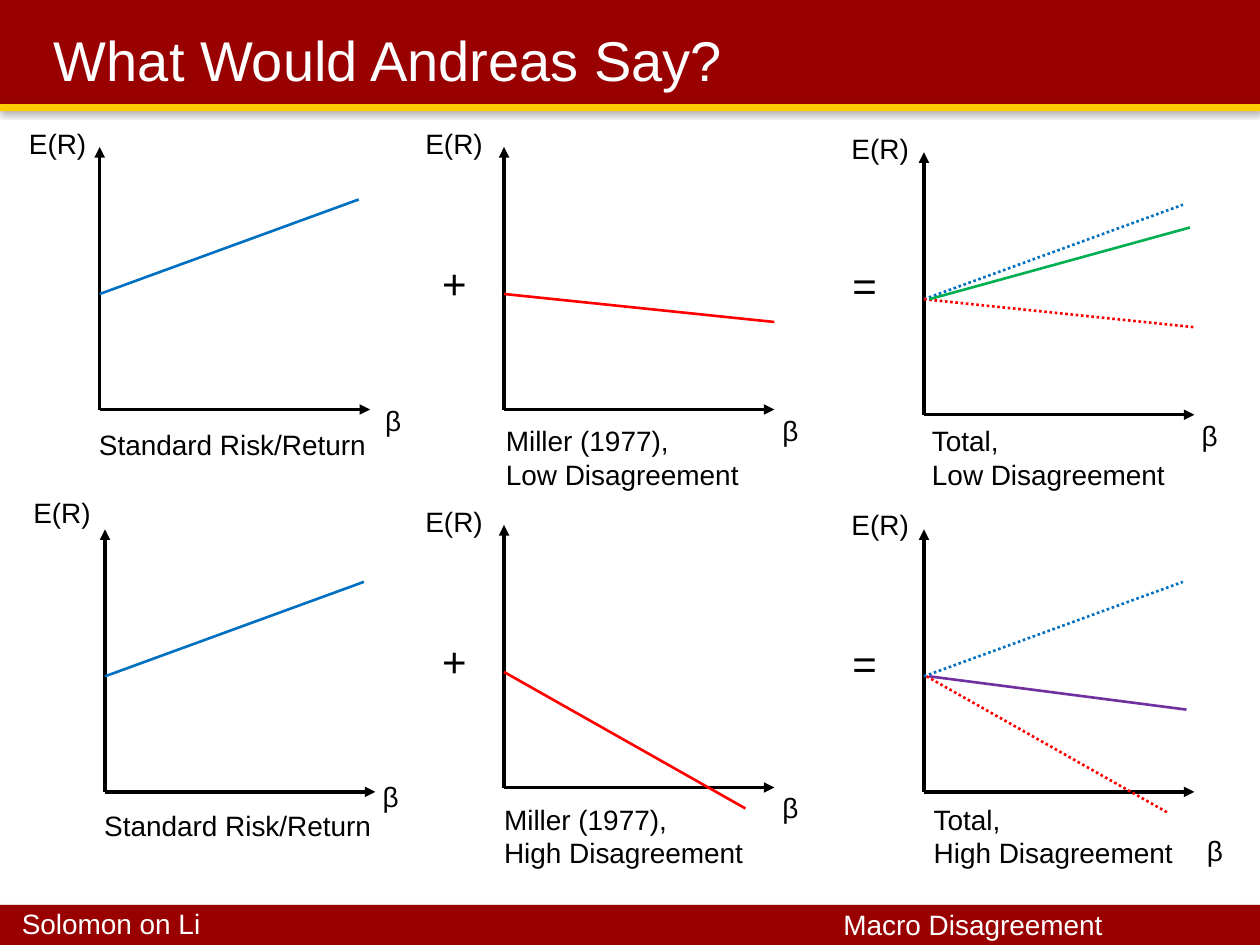
"""Build a slide of six expected-return charts under low and high disagreement."""
from dataclasses import dataclass

from lxml import etree
from pptx import Presentation
from pptx.dml.color import RGBColor
from pptx.enum.dml import MSO_LINE
from pptx.enum.shapes import MSO_CONNECTOR, MSO_SHAPE
from pptx.enum.text import MSO_ANCHOR
from pptx.oxml.ns import qn
from pptx.util import Pt

STRAIGHT = MSO_CONNECTOR.STRAIGHT
RECTANGLE = MSO_SHAPE.RECTANGLE
DOTTED = MSO_LINE.ROUND_DOT
MIDDLE = MSO_ANCHOR.MIDDLE
TOP = MSO_ANCHOR.TOP

BLACK = RGBColor(0x00, 0x00, 0x00)
WHITE = RGBColor(0xFF, 0xFF, 0xFF)
CRIMSON = RGBColor(0x99, 0x00, 0x00)
GOLD = RGBColor(0xFF, 0xCC, 0x00)
BLUE = RGBColor(0x00, 0x70, 0xC0)
RED = RGBColor(0xFF, 0x00, 0x00)
GREEN = RGBColor(0x00, 0xB0, 0x50)
PURPLE = RGBColor(0x70, 0x30, 0xA0)

FONT = "Arial"
SLIDE_WIDTH, SLIDE_HEIGHT = 720, 540
AXIS_WIDTH, AXIS_HEIGHT = 154.5, 150
INTERCEPT = 66


@dataclass
class Trend:
    """A return line: horizontal start offset, run, drop and look."""
    run: float
    drop: float
    color: RGBColor
    start: float = 0
    dotted: bool = False


@dataclass
class Panel:
    """A chart with its origin, label places, caption and trends."""
    origin: tuple
    return_label: tuple
    beta_label: tuple
    caption_place: tuple
    caption: list
    trends: list


PANELS = [
    Panel((57, 234), (9.5, 69), (213, 227), (49.5, 240.5),
          ["Standard Risk/Return"], [Trend(148, -54, BLUE)]),
    Panel((288, 234), (236, 69), (440, 232.5), (282, 238.5),
          ["Miller (1977),", "Low Disagreement"], [Trend(154.5, 16, RED)]),
    Panel((528, 237), (479.5, 71.5), (679.5, 235.5), (525.5, 238.5),
          ["Total,", "Low Disagreement"],
          [Trend(148, -54, BLUE, dotted=True),
           Trend(154.5, 16, RED, dotted=True),
           Trend(149, -41, GREEN, start=3)]),
    Panel((60, 452.5), (12, 279.5), (211.5, 442), (52.5, 458.5),
          ["Standard Risk/Return"], [Trend(148, -54, BLUE)]),
    Panel((288, 450), (236, 285), (440, 448), (281, 455),
          ["Miller (1977),", "High Disagreement"], [Trend(138, 78, RED)]),
    Panel((528, 452.5), (479.5, 286.5), (682.5, 472.5), (526.5, 455),
          ["Total,", "High Disagreement"],
          [Trend(148, -54, BLUE, dotted=True),
           Trend(147, 19, PURPLE, start=3),
           Trend(138, 78, RED, start=1.5, dotted=True)]),
]


def add_band(slide, top, height, color, opacity):
    """Add a full-width band with a soft shadow below it."""
    shape = slide.shapes.add_shape(
        RECTANGLE, Pt(0), Pt(top), Pt(SLIDE_WIDTH), Pt(height))
    shape.fill.solid()
    shape.fill.fore_color.rgb = color
    shape.line.fill.background()
    shape.shadow.inherit = False
    effects = shape._element.spPr.find(qn("a:effectLst"))
    shadow = etree.SubElement(
        effects, qn("a:outerShdw"), blurRad=str(Pt(3.1)), dist=str(Pt(1.8)),
        dir="5400000", rotWithShape="0")
    shadow_color = etree.SubElement(shadow, qn("a:srgbClr"), val="000000")
    etree.SubElement(shadow_color, qn("a:alpha"), val=str(opacity * 1000))


def add_text(slide, place, size, lines, points=16, color=BLACK,
             wrap=True, inset=True, anchor=TOP):
    """Add a text box with one paragraph per line."""
    shape = slide.shapes.add_textbox(*(Pt(value) for value in place + size))
    frame = shape.text_frame
    frame.word_wrap = wrap
    frame.vertical_anchor = anchor
    if not inset:
        frame.margin_left = frame.margin_right = Pt(0)
        frame.margin_top = frame.margin_bottom = Pt(0)
    for index, line in enumerate(lines):
        paragraph = frame.add_paragraph() if index else frame.paragraphs[0]
        run = paragraph.add_run()
        run.text = line
        run.font.name = FONT
        run.font.size = Pt(points)
        run.font.color.rgb = color


def add_line(slide, start, end, color, width, dotted=False, arrow=False):
    """Add a straight line, dotted or ending in an arrowhead on request."""
    connector = slide.shapes.add_connector(
        STRAIGHT, *(Pt(value) for value in start + end))
    connector.line.color.rgb = color
    connector.line.width = Pt(width)
    if dotted:
        connector.line.dash_style = DOTTED
    properties = connector._element.spPr
    if arrow:
        etree.SubElement(properties.find(qn("a:ln")), qn("a:tailEnd"), type="triangle")
    etree.SubElement(properties, qn("a:effectLst"))


def add_panel(slide, panel):
    """Add the axes, labels, trends and caption of one chart."""
    left, base = panel.origin
    for end in ((left, base - AXIS_HEIGHT), (left + AXIS_WIDTH, base)):
        add_line(slide, panel.origin, end, BLACK, 2, arrow=True)
    for trend in panel.trends:
        start = (left + trend.start, base - INTERCEPT)
        end = (start[0] + trend.run, start[1] + trend.drop)
        add_line(slide, start, end, trend.color, 1.5, dotted=trend.dotted)
    add_text(slide, panel.return_label, (47.5, 26.5), ["E(R)"], wrap=False)
    add_text(slide, panel.beta_label, (40, 26.5), ["β"])
    height = 26.5 if len(panel.caption) == 1 else 46
    add_text(slide, panel.caption_place, (186, height), panel.caption)


def main():
    """Build and save the slide."""
    presentation = Presentation()
    presentation.slide_width = Pt(SLIDE_WIDTH)
    presentation.slide_height = Pt(SLIDE_HEIGHT)
    slide = presentation.slides.add_slide(presentation.slide_layouts[6])

    add_band(slide, 517, 23, CRIMSON, 35)
    add_band(slide, 0, 59.5, CRIMSON, 35)
    add_band(slide, 59.5, 4, GOLD, 38)
    add_text(slide, (12.5, 518), (235.5, 19.5), ["Solomon on Li"],
             color=WHITE, inset=False)
    add_text(slide, (482, 518.5), (235.5, 19.5), ["Macro Disagreement"],
             color=WHITE, inset=False)
    add_text(slide, (23.75, 12.5), (648, 42), ["What Would Andreas Say?"],
             points=32, color=WHITE, anchor=MIDDLE)

    for panel in PANELS:
        add_panel(slide, panel)
    for row_top in (143.5, 359.5):
        add_text(slide, (245.5, row_top), (39.5, 36), ["+"], points=24)
        add_text(slide, (480, row_top + 1), (39.5, 36), ["="], points=24)

    presentation.save("out.pptx")


if __name__ == "__main__":
    main()
